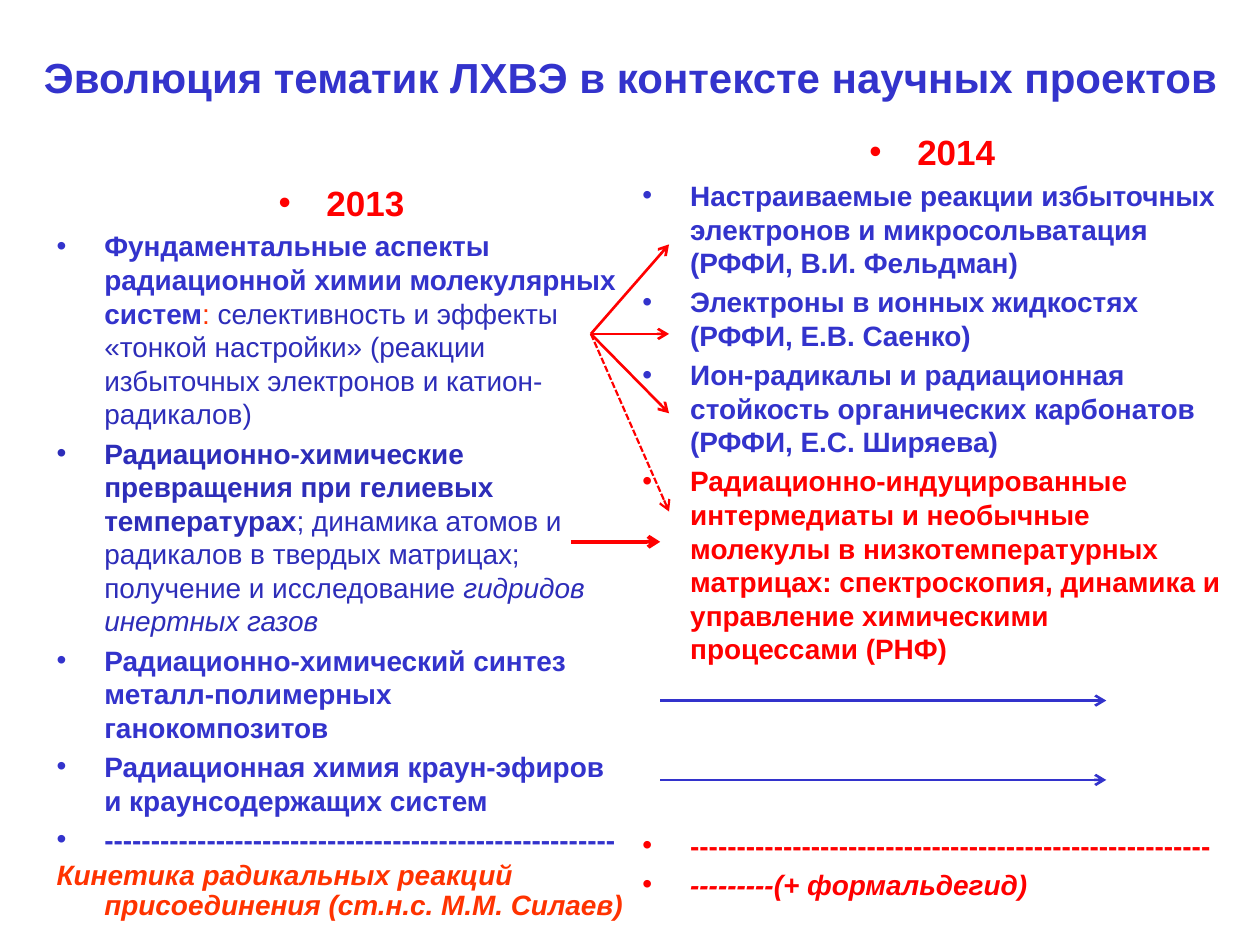
from dataclasses import dataclass

from lxml.etree import SubElement
from pptx import Presentation
from pptx.dml.color import RGBColor
from pptx.enum.dml import MSO_LINE
from pptx.enum.shapes import MSO_CONNECTOR
from pptx.enum.text import MSO_ANCHOR, PP_ALIGN
from pptx.oxml.ns import qn
from pptx.util import Inches, Pt


@dataclass(frozen=True)
class Theme:
    font: str = "Arial"
    blue: str = "3333CC"
    deep_blue: str = "2D2DB9"
    red: str = "FF0000"
    orange: str = "FF3300"
    title_size: int = 24
    year_size: int = 20
    body_size: int = 16
    indent: float = 0.38


class SlideBuilder:
    def __init__(self, slide, theme):
        self.slide = slide
        self.theme = theme

    def text_frame(self, left, top, width, height):
        box = self.slide.shapes.add_textbox(
            Inches(left), Inches(top), Inches(width), Inches(height))
        box.text_frame.word_wrap = True
        return box.text_frame

    def style(self, font, size=None, color=None, bold=None, italic=None):
        if size:
            font.name = self.theme.font
            font.size = Pt(size)
        if color:
            font.color.rgb = RGBColor.from_string(color)
        font.bold = bold
        font.italic = italic

    def title(self, text, *place):
        frame = self.text_frame(*place)
        frame.vertical_anchor = MSO_ANCHOR.MIDDLE
        heading = frame.paragraphs[0]
        heading.text = text
        heading.alignment = PP_ALIGN.CENTER
        self.style(heading.font, self.theme.title_size, self.theme.blue, True)

    def column(self, year, *place):
        """Start a column with its centred year and return its text frame."""
        frame = self.text_frame(*place)
        self.fill_item(frame.paragraphs[0], year, self.theme.red,
                       size=self.theme.year_size, align=PP_ALIGN.CENTER)
        return frame

    def item(self, frame, content, color=None, **options):
        self.fill_item(frame.add_paragraph(), content,
                       color or self.theme.blue, **options)

    def fill_item(self, paragraph, content, color, size=None, align=None,
                  bullet=True, italic=None, before=None, spacing=None):
        """Content is one string, or (text, colour, bold, italic) runs."""
        size = size or self.theme.body_size
        paragraph.alignment = align
        paragraph.line_spacing = spacing
        paragraph.space_before = Pt(before or 0.2 * size)
        self.hang(paragraph, color, bullet)
        if isinstance(content, str):
            paragraph.text = content
            self.style(paragraph.font, size, color, True, italic)
            return
        for text, run_color, bold, run_italic in content:
            run = paragraph.add_run()
            run.text = text
            self.style(run.font, size, run_color, bold, run_italic)

    def hang(self, paragraph, color, bullet):
        properties = paragraph._p.get_or_add_pPr()
        indent = Inches(self.theme.indent)
        properties.set("marL", str(indent))
        properties.set("indent", str(-indent))
        if not bullet:
            SubElement(properties, qn("a:buNone"))
            return
        bullet_color = SubElement(properties, qn("a:buClr"))
        SubElement(bullet_color, qn("a:srgbClr"), val=color)
        SubElement(properties, qn("a:buFont"), typeface=self.theme.font)
        SubElement(properties, qn("a:buChar"), char="•")

    def arrow(self, start, end, color, weight=1.5, dash=None):
        connector = self.slide.shapes.add_connector(
            MSO_CONNECTOR.STRAIGHT, *map(Inches, start + end))
        line = connector.line
        line.color.rgb = RGBColor.from_string(color)
        line.width = Pt(weight)
        if dash:
            line.dash_style = dash
        SubElement(line._get_or_add_ln(), qn("a:tailEnd"), type="arrow")
        SubElement(connector._element.spPr, qn("a:effectLst"))


def add_projects_2013(builder):
    theme = builder.theme
    column = builder.column("2013", 0.35, 1.39, 4.72, 3.78)
    builder.item(column, [
        ("Фундаментальные аспекты радиационной химии молекулярных систем",
         theme.blue, True, None),
        (": ", theme.orange, False, None),
        ("селективность и эффекты «тонкой настройки» (реакции избыточных "
         "электронов и катион-радикалов)", theme.deep_blue, False, None),
    ])
    builder.item(column, [
        ("Радиационно-химические превращения при гелиевых температурах",
         theme.deep_blue, True, None),
        ("; динамика атомов и радикалов в твердых матрицах; получение и "
         "исследование ", theme.deep_blue, False, None),
        ("гидридов инертных газов", theme.deep_blue, False, True),
    ], theme.deep_blue)
    for topic in (
        "Радиационно-химический синтез металл-полимерных\vганокомпозитов",
        "Радиационная химия краун-эфиров и краунсодержащих систем",
        "-" * 55,
    ):
        builder.item(column, topic)
    builder.item(
        column,
        "Кинетика радикальных реакций присоединения (ст.н.с. М.М. Силаев)",
        theme.orange, bullet=False, italic=True, spacing=0.9)


def add_projects_2014(builder):
    theme = builder.theme
    column = builder.column("2014", 5, 0.99, 4.8, 4.57)
    for project in (
        "Настраиваемые реакции избыточных электронов и микросольватация "
        "(РФФИ, В.И. Фельдман)",
        "Электроны в ионных жидкостях (РФФИ, Е.В. Саенко)",
        "Ион-радикалы и радиационная стойкость органических карбонатов "
        "(РФФИ, Е.С. Ширяева)",
    ):
        builder.item(column, project)
    builder.item(
        column,
        "Радиационно-индуцированные интермедиаты и необычные молекулы в "
        "низкотемпературных матрицах: спектроскопия, динамика и управление "
        "химическими процессами (РНФ)", theme.red)
    builder.item(column, "-" * 56, theme.red, before=93)
    builder.item(column, "---------(+ формальдегид)", theme.red, italic=True)


def add_links(builder):
    theme = builder.theme
    fan_origin = (4.69, 2.65)
    for target_y in (1.94, 2.65, 3.28):
        builder.arrow(fan_origin, (5.31, target_y), theme.red)
    builder.arrow(fan_origin, (5.31, 4.06), theme.red, 1.25,
                  MSO_LINE.SQUARE_DOT)
    builder.arrow((4.53, 4.3), (5.24, 4.3), theme.red, 2.25)
    for continued_y in (5.56, 6.19):
        builder.arrow((5.24, continued_y), (8.78, continued_y), theme.blue)


def main():
    presentation = Presentation()
    presentation.slide_width = Inches(10)
    presentation.slide_height = Inches(7.5)
    slide = presentation.slides.add_slide(presentation.slide_layouts[6])
    builder = SlideBuilder(slide, Theme())
    add_projects_2013(builder)
    add_projects_2014(builder)
    builder.title("Эволюция тематик ЛХВЭ в контексте научных проектов",
                  0.2, 0.21, 9.61, 0.79)
    add_links(builder)
    presentation.save("out.pptx")


if __name__ == "__main__":
    main()
